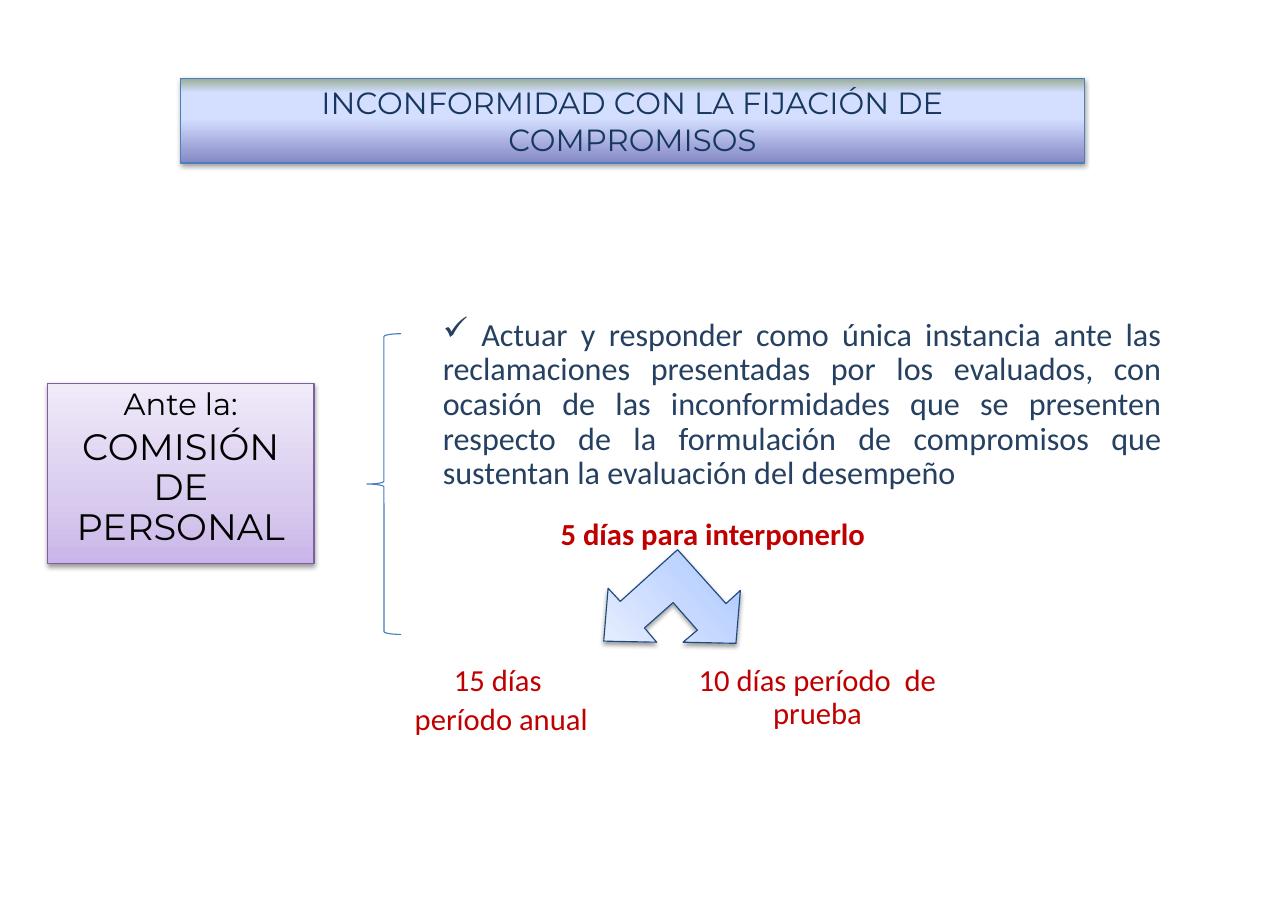
from lxml import etree
from pptx import Presentation
from pptx.dml.color import RGBColor
from pptx.enum.shapes import MSO_SHAPE as SHAPE
from pptx.enum.text import MSO_ANCHOR as ANCHOR, MSO_AUTO_SIZE as AUTO, PP_ALIGN as ALIGN
from pptx.oxml.ns import qn
from pptx.util import Inches, Pt

NAVY, BLUE, RED = "17375E", "4B7EBC", "C00000"


def rgb(value):
    return RGBColor.from_string(value)


def add_node(parent, tag, **attrs):
    return etree.SubElement(parent, qn(tag), {k: str(v) for k, v in attrs.items()})


class SlideBuilder:
    text_size = 20
    line_spacing = 0.9

    def __init__(self, slide):
        self.s = slide

    def outline(self, sp, color):
        sp.line.color.rgb = rgb(color)
        sp.line.width = Pt(0.75)

    def decorate(self, sp, stops, line, angle=90):
        """Give a shape a gradient (angle counter-clockwise), an outline and a soft shadow."""
        sp.fill.gradient()
        sp.fill.gradient_angle = angle
        stop_list = sp._element.spPr.find(".//" + qn("a:gsLst"))
        for old in list(stop_list):
            stop_list.remove(old)
        for pos, color in stops:
            stop = add_node(stop_list, "a:gs", pos=pos * 1000)
            add_node(stop, "a:srgbClr", val=color)
        self.outline(sp, line)
        sp.shadow.inherit = False
        effects = sp._element.spPr.find(qn("a:effectLst"))
        shadow = add_node(effects, "a:outerShdw", blurRad=Pt(3.1), dist=Pt(1.6),
                          dir=90 * 60000, rotWithShape=0)
        add_node(add_node(shadow, "a:srgbClr", val="000000"), "a:alpha", val=38000)

    def set_text(self, sp, lines, color, font="Calibri", sizes=None, align=ALIGN.CENTER,
                 bold=False, spacing=line_spacing, anchor=ANCHOR.TOP, bullet=None):
        tf = sp.text_frame
        tf.word_wrap = True
        tf.auto_size = AUTO.NONE
        tf.vertical_anchor = anchor
        sizes = sizes or [self.text_size] * len(lines)
        for i, (line, size) in enumerate(zip(lines, sizes)):
            p = tf.paragraphs[0] if i == 0 else tf.add_paragraph()
            p.text = line
            p.alignment = align
            p.line_spacing = spacing
            p.space_before = Pt(size * 0.2 if i and spacing < 1 else 0)
            if bullet:
                props = p._p.get_or_add_pPr()
                props.set("marL", "0")
                props.set("indent", "0")
                add_node(props, "a:buChar", char=bullet)
            p.font.size = Pt(size)
            p.font.name = font
            p.font.bold = bold
            p.font.color.rgb = rgb(color)

    def title(self, box, lines, stops):
        sp = self.s.shapes.title
        sp.left, sp.top, sp.width, sp.height = map(Inches, box)
        self.decorate(sp, stops, BLUE)
        self.set_text(sp, lines, NAVY, "Montserrat", spacing=1.0, anchor=ANCHOR.MIDDLE)

    def panel(self, box, lines, stops, line, **style):
        sp = self.s.shapes.add_shape(SHAPE.RECTANGLE, *map(Inches, box))
        self.decorate(sp, stops, line)
        self.set_text(sp, lines, "000000", "Montserrat", **style)

    def text(self, box, lines, color, **style):
        sp = self.s.shapes.add_textbox(*map(Inches, box))
        self.set_text(sp, lines, color, **style)

    def brace(self, box):
        sp = self.s.shapes.add_shape(SHAPE.LEFT_BRACE, *map(Inches, box))
        sp.fill.background()
        sp.shadow.inherit = False
        self.outline(sp, BLUE)

    def outline_shape(self, points, stops, line, angle):
        start, *rest = [(Inches(x), Inches(y)) for x, y in points]
        fb = self.s.shapes.build_freeform(*start)
        fb.add_line_segments(rest, close=True)
        self.decorate(fb.convert_to_shape(), stops, line, angle)


def main():
    prs = Presentation()
    prs.slide_width, prs.slide_height = Inches(11.69), Inches(8.27)
    b = SlideBuilder(prs.slides.add_slide(prs.slide_layouts[5]))

    b.title((1.64, 0.71, 8.2, 0.77),
            ["INCONFORMIDAD CON LA FIJACIÓN DE", "COMPROMISOS"],
            [(0, "8488C4"), (53, "D4DEFF"), (83, "D4DEFF"), (100, "96AB94")])
    b.panel((0.43, 3.48, 2.42, 1.64), ["Ante la:", "COMISIÓN DE PERSONAL"],
            [(0, "C9B5E8"), (35, "D8CBEE"), (100, "F0EAF9")], "7D60A0", sizes=[20, 24])
    b.text((3.92, 2.84, 6.72, 1.78),
           [" Actuar y responder como única instancia ante las reclamaciones presentadas "
            "por los evaluados, con ocasión de las inconformidades que se presenten "
            "respecto de la formulación de compromisos que sustentan la evaluación del "
            "desempeño"],
           "254061", sizes=[21], align=ALIGN.JUSTIFY, bullet="✓")
    b.brace((3.33, 3.03, 0.31, 2.73))
    b.text((4.99, 4.66, 3.94, 0.41), ["5 días para interponerlo"], RED,
           align=ALIGN.LEFT, bold=True)
    two_way_arrow = [(5.48, 5.82), (5.96, 5.83), (5.85, 5.7), (6.11, 5.47),
                     (6.33, 5.72), (6.2, 5.83), (6.68, 5.84), (6.72, 5.36),
                     (6.59, 5.48), (6.15, 4.99), (5.63, 5.46), (5.52, 5.34)]
    b.outline_shape(two_way_arrow, [(0, "A4C4FF"), (35, "BFD4FF"), (100, "E6EEFF")],
                    "1F497D", angle=222)
    b.text((3.17, 5.99, 2.76, 0.78), ["15 días ", "período anual"], RED)
    b.text((6.24, 5.99, 2.36, 0.71), ["10 días período  de prueba"], RED)

    prs.save("out.pptx")


if __name__ == "__main__":
    main()
